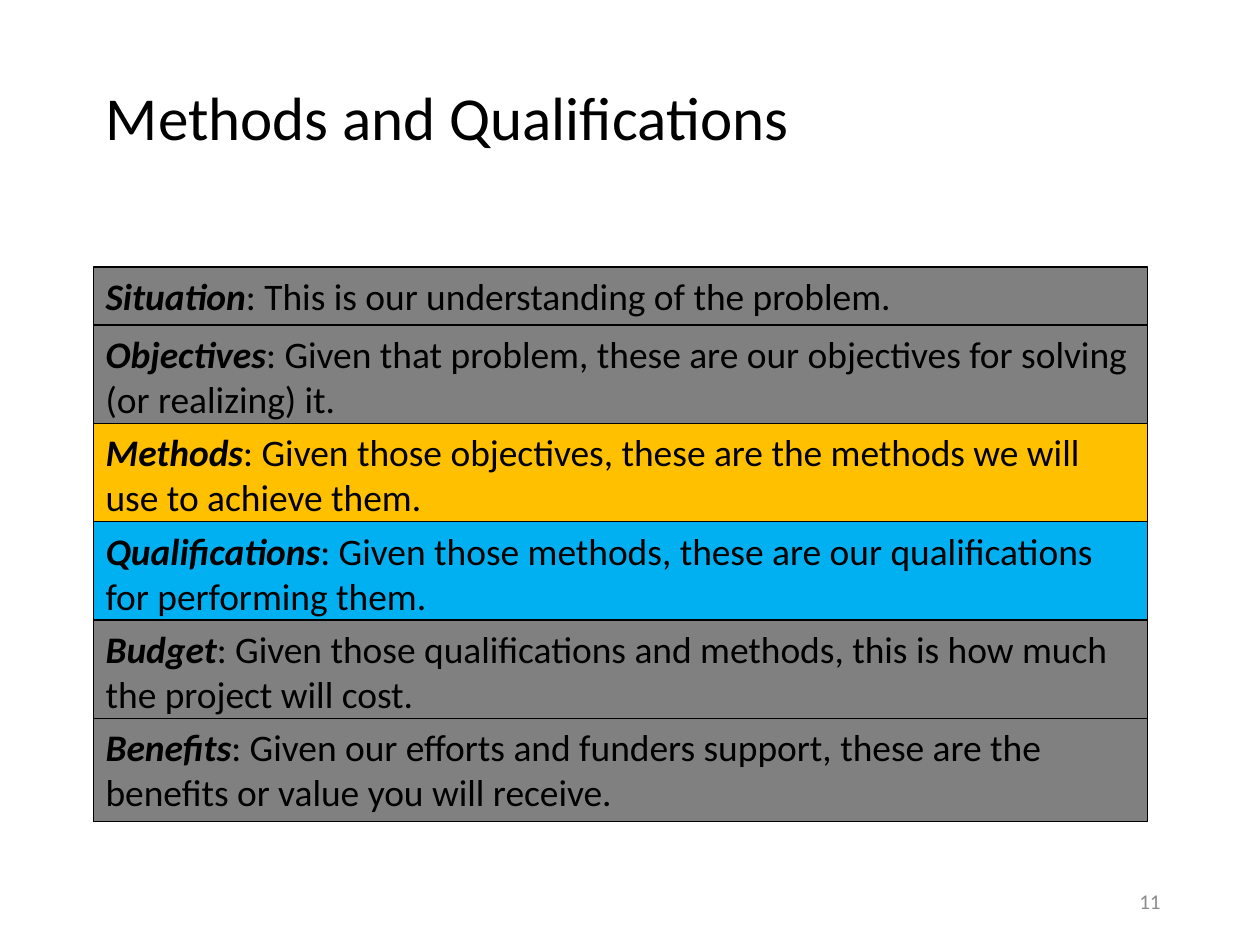
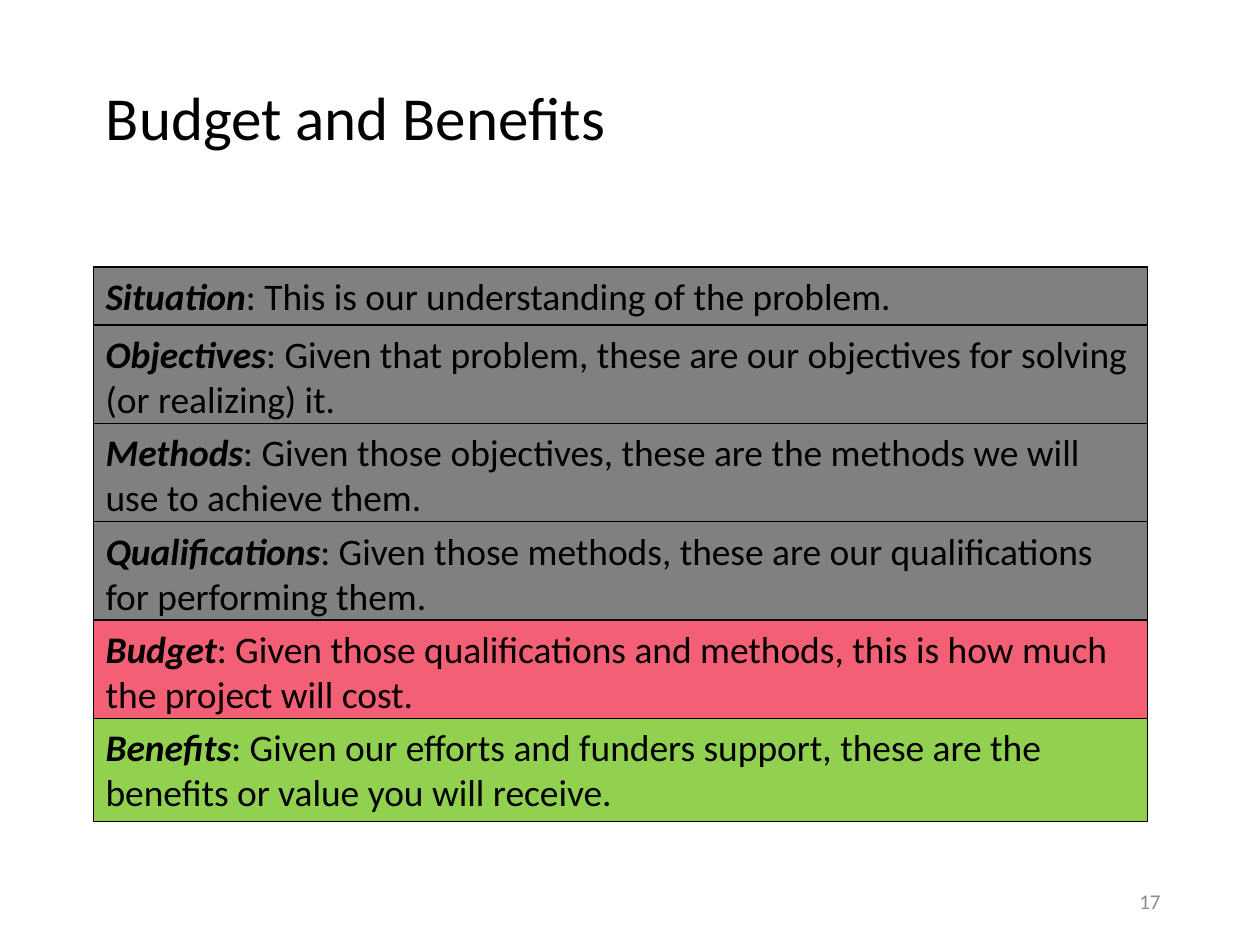
import pptx
import pptx.util
import pptx.dml.color
import pptx.enum.shapes
import pptx.enum.text
from pptx.util import Inches

COLORS = {
    "text": "000000", "number": "8C8C8C", "muted": "808080",
    "methods": "FFC000", "qualifications": "00B0F0",
    "budget": "F35F74", "benefits": "92D050",
}
FONT = "Calibri"
LEFT, WIDTH = 0.74, 8.37
FIRST_TOP, FIRST_HEIGHT = 2.12, 0.46
ROW_HEIGHT, ROW_STEP = 0.82, 0.78

SECTIONS = [
    ("Situation", "This is our understanding of the problem."),
    ("Objectives", "Given that problem, these are our objectives for solving (or realizing) it."),
    ("Methods", "Given those objectives, these are the methods we will use to achieve them."),
    ("Qualifications", "Given those methods, these are our qualifications for performing them."),
    ("Budget", "Given those qualifications and methods, this is how much the project will cost."),
    ("Benefits", "Given our efforts and funders support, these are the benefits or value "
                 "you will receive."),
]

# Title, page number, highlighted sections
SLIDES = [
    ("Methods and Qualifications", 11, ("Methods", "Qualifications")),
    ("Budget and Benefits", 17, ("Budget", "Benefits")),
]


def color(name):
    return pptx.dml.color.RGBColor.from_string(COLORS[name])


class ProposalDeck:
    def __init__(self):
        self.deck = pptx.Presentation()
        self.deck.slide_width, self.deck.slide_height = Inches(10), Inches(7.5)
        self.page = None

    def add_page(self):
        self.page = self.deck.slides.add_slide(self.deck.slide_layouts[5])

    def style_span(self, span, size, color_name="text", strong=False):
        span.font.name = FONT
        span.font.size = pptx.util.Pt(size)
        span.font.bold = span.font.italic = strong
        span.font.color.rgb = color(color_name)

    def set_frame(self, frame, anchor, align):
        frame.word_wrap = True
        frame.auto_size = pptx.enum.text.MSO_AUTO_SIZE.NONE
        frame.vertical_anchor = anchor
        frame.paragraphs[0].alignment = align

    def title(self, text):
        box = self.page.shapes.title
        box.left, box.top = Inches(LEFT), Inches(0.25)
        box.width, box.height = Inches(WIDTH), Inches(1.41)
        box.text_frame.text = text
        self.set_frame(box.text_frame, pptx.enum.text.MSO_ANCHOR.MIDDLE,
                       pptx.enum.text.PP_ALIGN.LEFT)
        para = box.text_frame.paragraphs[0]
        para.line_spacing = 0.9
        self.style_span(para.runs[0], 34.9)

    def page_number(self, number):
        box = self.page.shapes.add_textbox(Inches(7.06), Inches(6.95), Inches(2.25), Inches(0.4))
        box.text_frame.text = str(number)
        self.set_frame(box.text_frame, pptx.enum.text.MSO_ANCHOR.MIDDLE,
                       pptx.enum.text.PP_ALIGN.RIGHT)
        self.style_span(box.text_frame.paragraphs[0].runs[0], 12, "number")

    def section(self, group, name, sentence, top, height, fill):
        box = group.shapes.add_shape(pptx.enum.shapes.MSO_SHAPE.RECTANGLE,
                                     Inches(LEFT), Inches(top), Inches(WIDTH), Inches(height))
        box.shadow.inherit = False
        box.fill.solid()
        box.fill.fore_color.rgb = color(fill)
        box.line.color.rgb = color("text")
        box.line.width = pptx.util.Pt(0.75)
        self.set_frame(box.text_frame, pptx.enum.text.MSO_ANCHOR.TOP,
                       pptx.enum.text.PP_ALIGN.LEFT)
        para = box.text_frame.paragraphs[0]
        for text, strong in ((name, True), (f": {sentence}", False)):
            span = para.add_run()
            span.text = text
            self.style_span(span, 21.4, strong=strong)

    def section_stack(self, highlighted):
        group = self.page.shapes.add_group_shape()
        top, height = FIRST_TOP, FIRST_HEIGHT
        for index, (name, sentence) in enumerate(SECTIONS):
            if index:
                top = FIRST_TOP + FIRST_HEIGHT + (index - 1) * ROW_STEP
                height = ROW_HEIGHT
            fill = name.lower() if name in highlighted else "muted"
            self.section(group, name, sentence, top, height, fill)


def main():
    proposal = ProposalDeck()
    for title, number, highlighted in SLIDES:
        proposal.add_page()
        proposal.title(title)
        proposal.page_number(number)
        proposal.section_stack(highlighted)
    proposal.deck.save("out.pptx")


if __name__ == "__main__":
    main()
